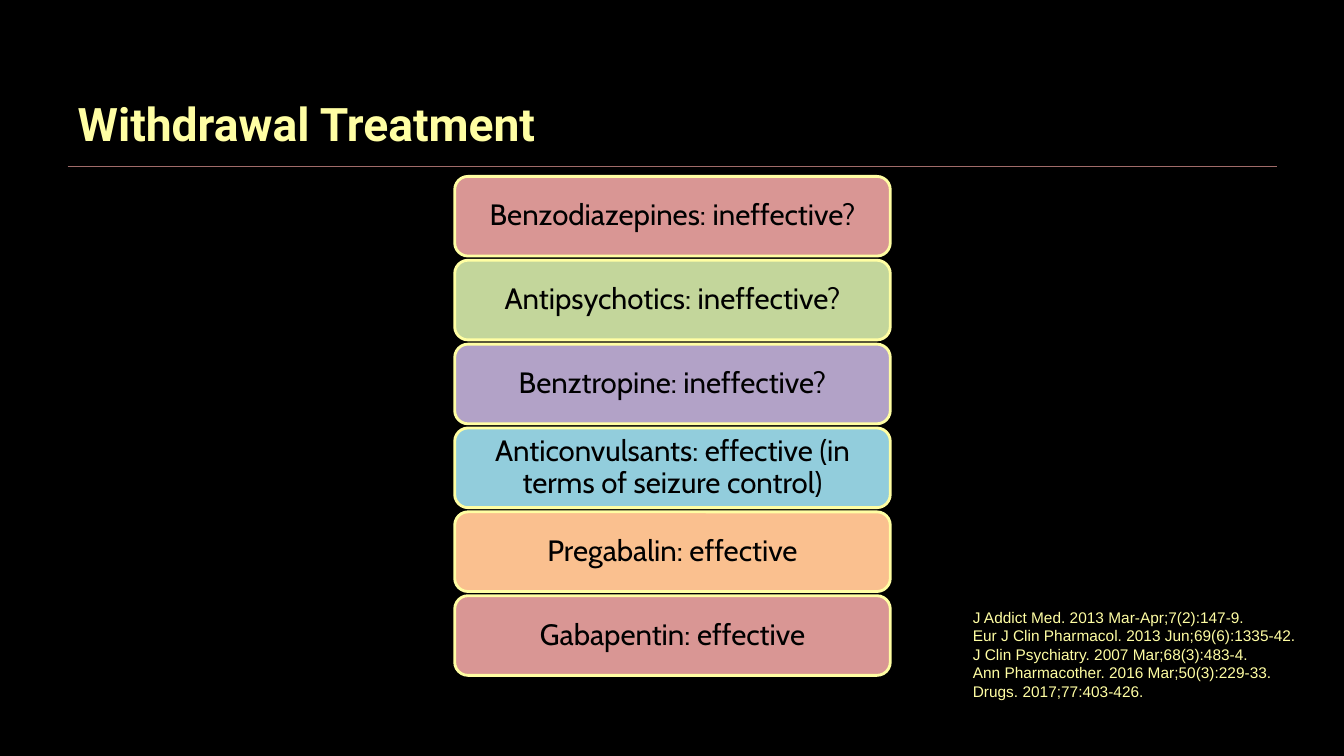
"""Build the Withdrawal Treatment slide."""
from dataclasses import dataclass

from pptx import Presentation
from pptx.dml.color import RGBColor
from pptx.enum.shapes import MSO_CONNECTOR, MSO_SHAPE
from pptx.enum.text import MSO_ANCHOR, MSO_AUTO_SIZE, PP_ALIGN
from pptx.oxml.ns import qn
from pptx.slide import Slide
from pptx.text.text import _Paragraph
from pptx.util import Inches, Pt
from lxml.etree import SubElement

BLACK = RGBColor(0x00, 0x00, 0x00)
YELLOW = RGBColor(0xFF, 0xFE, 0xA3)
RULE = RGBColor(0xA0, 0x6B, 0x69)
ROSE = RGBColor(0xD9, 0x96, 0x94)
GREEN = RGBColor(0xC3, 0xD6, 0x9B)
PURPLE = RGBColor(0xB2, 0xA2, 0xC7)
AQUA = RGBColor(0x92, 0xCD, 0xDC)
ORANGE = RGBColor(0xFA, 0xC0, 0x8F)

FIRST_TOP, LAST_TOP = 1.75, 5.91


@dataclass(frozen=True)
class Treatment:
    text: str
    fill: RGBColor


TREATMENTS = [
    Treatment("Benzodiazepines: ineffective?", ROSE),
    Treatment("Antipsychotics: ineffective?", GREEN),
    Treatment("Benztropine: ineffective?", PURPLE),
    Treatment("Anticonvulsants: effective (in terms of seizure control)", AQUA),
    Treatment("Pregabalin: effective", ORANGE),
    Treatment("Gabapentin: effective", ROSE),
]

REFERENCES = [
    "J Addict Med. 2013 Mar-Apr;7(2):147-9.",
    "Eur J Clin Pharmacol. 2013 Jun;69(6):1335-42.",
    "J Clin Psychiatry. 2007 Mar;68(3):483-4.",
    "Ann Pharmacother. 2016 Mar;50(3):229-33.",
    "Drugs. 2017;77:403-426.",
]


def add_run(p: _Paragraph, text: str, font: str, size: float,
            color: RGBColor, bold: bool = False) -> None:
    r = p.add_run()
    r.text = text
    r.font.name = font
    r.font.size = Pt(size)
    r.font.color.rgb = color
    r.font.bold = bold


def add_title(s: Slide) -> None:
    sp = s.shapes.title
    sp.left, sp.top = Inches(0.67), Inches(0.3)
    sp.width, sp.height = Inches(12), Inches(1.25)
    tf = sp.text_frame
    tf.auto_size = MSO_AUTO_SIZE.NONE
    tf.vertical_anchor = MSO_ANCHOR.BOTTOM
    p = tf.paragraphs[0]
    p.alignment = PP_ALIGN.LEFT
    add_run(p, "Withdrawal Treatment", "Roboto", 33, YELLOW, True)


def add_rule(s: Slide) -> None:
    line = s.shapes.add_connector(MSO_CONNECTOR.STRAIGHT, Inches(0.67),
                                  Inches(1.65), Inches(12.67), Inches(1.65))
    line.line.color.rgb = RULE
    line.line.width = Pt(0.75)
    SubElement(line._element.spPr, qn("a:effectLst"))


def add_treatment(s: Slide, treatment: Treatment, top: float) -> None:
    sp = s.shapes.add_shape(MSO_SHAPE.ROUNDED_RECTANGLE, Inches(4.51),
                            Inches(top), Inches(4.32), Inches(0.79))
    sp.shadow.inherit = False
    sp.fill.solid()
    sp.fill.fore_color.rgb = treatment.fill
    sp.line.color.rgb = YELLOW
    sp.line.width = Pt(2)
    tf = sp.text_frame
    tf.word_wrap = True
    tf.vertical_anchor = MSO_ANCHOR.MIDDLE
    tf.margin_left = tf.margin_right = Inches(0.09)
    tf.margin_top = tf.margin_bottom = Inches(0.04)
    p = tf.paragraphs[0]
    p.alignment = PP_ALIGN.CENTER
    p.line_spacing = 0.9
    add_run(p, treatment.text, "Cabin", 21, BLACK)


def add_references(s: Slide) -> None:
    sp = s.shapes.add_textbox(Inches(9.55), Inches(5.98),
                              Inches(3.45), Inches(1.23))
    tf = sp.text_frame
    tf.word_wrap = True
    for i, reference in enumerate(REFERENCES):
        p = tf.add_paragraph() if i else tf.paragraphs[0]
        add_run(p, reference, "Arial", 11, YELLOW)


def main() -> None:
    prs = Presentation()
    prs.slide_width, prs.slide_height = Inches(13.33), Inches(7.5)
    s = prs.slides.add_slide(prs.slide_layouts[5])
    s.background.fill.solid()
    s.background.fill.fore_color.rgb = BLACK
    add_rule(s)
    add_title(s)
    pitch = (LAST_TOP - FIRST_TOP) / (len(TREATMENTS) - 1)
    for i, treatment in enumerate(TREATMENTS):
        add_treatment(s, treatment, FIRST_TOP + i * pitch)
    add_references(s)
    prs.save("out.pptx")


if __name__ == "__main__":
    main()
